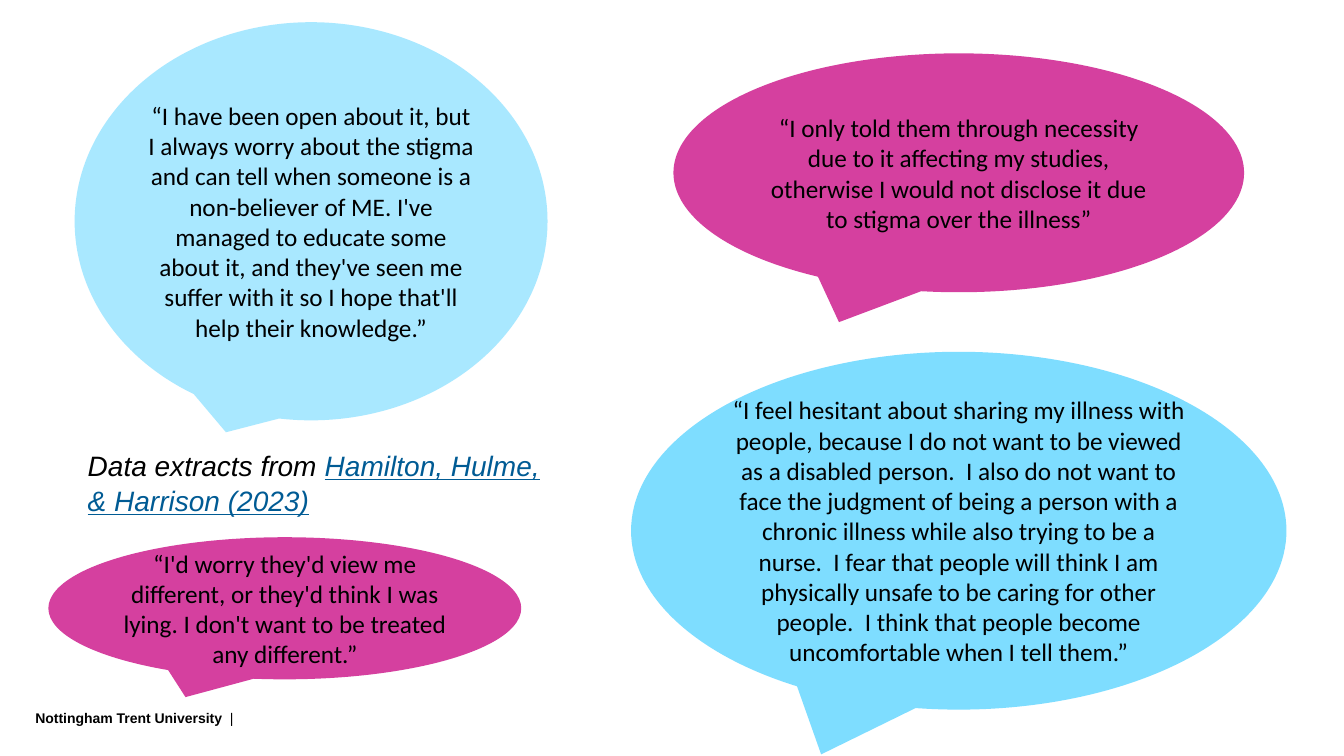
"""Build a slide of quotations in speech bubbles."""
import lxml.etree
import pptx
import pptx.dml.color
import pptx.enum.shapes
import pptx.enum.text
import pptx.oxml.ns
import pptx.util

Inches = pptx.util.Inches
BLACK = "000000"
TAIL = (-0.21, 0.625)

QUOTES = [
    ((0.74, 0.22, 4.69, 3.95), "8DE1FF", (-0.18, 0.53),
     "“I have been open about it, but I always worry about the stigma and can "
     "tell when someone is a non-believer of ME. I've managed to educate some "
     "about it, and they've seen me suffer with it so I hope that'll help "
     "their knowledge.”"),
    ((6.26, 3.49, 6.5, 3.55), "54D2FF", TAIL,
     "“I feel hesitant about sharing my illness with people, because I do not "
     "want to be viewed as a disabled person.  I also do not want to face the "
     "judgment of being a person with a chronic illness while also trying to "
     "be a nurse.  I fear that people will think I am physically unsafe to be "
     "caring for other people.  I think that people become uncomfortable when "
     "I tell them.”"),
    ((0.48, 5.33, 4.69, 1.41), "C7007F", TAIL,
     "“I'd worry they'd view me different, or they'd think I was lying. "
     "I don't want to be treated any different.”"),
    ((6.68, 0.53, 5.66, 2.37), "C7007F", TAIL,
     "“I only told them through necessity due to it affecting my studies, "
     "otherwise I would not disclose it due to stigma over the illness”"),
]


def rgb(value):
    """Return the colour for a hex string."""
    return pptx.dml.color.RGBColor.from_string(value)


def add_run(p, text, color=BLACK, **formats):
    """Append a run with the given font values."""
    r = p.add_run()
    r.text = text
    r.font.color.rgb = rgb(color)
    for name, value in formats.items():
        setattr(r.font, name, value)


def set_frame(tf, margin, anchor):
    """Set wrapping, equal margins and vertical anchor of a text frame."""
    formats = {"word_wrap": True, "vertical_anchor": anchor}
    for side in ("left", "top", "right", "bottom"):
        formats["margin_" + side] = Inches(margin)
    for name, value in formats.items():
        setattr(tf, name, value)


def add_quote(s, box, color, tail, text):
    """Place a translucent speech bubble with a centred quotation."""
    sp = s.shapes.add_shape(
        pptx.enum.shapes.MSO_SHAPE.OVAL_CALLOUT, *map(Inches, box))
    sp.adjustments[0], sp.adjustments[1] = tail
    sp.shadow.inherit = False
    sp.line.fill.background()
    sp.fill.solid()
    sp.fill.fore_color.rgb = rgb(color)
    fill = sp.fill._xPr.find(".//" + pptx.oxml.ns.qn("a:srgbClr"))
    lxml.etree.SubElement(fill, pptx.oxml.ns.qn("a:alpha"), val="75000")
    set_frame(sp.text_frame, 0.04, pptx.enum.text.MSO_ANCHOR.MIDDLE)
    p = sp.text_frame.paragraphs[0]
    p.alignment = pptx.enum.text.PP_ALIGN.CENTER
    add_run(p, text, size=pptx.util.Pt(18), name="Calibri")


def add_label(s, box, size, runs, spacing=1.0):
    """Place a plain text box made of (text, font values) runs."""
    sp = s.shapes.add_textbox(*map(Inches, box))
    set_frame(sp.text_frame, 0, pptx.enum.text.MSO_ANCHOR.TOP)
    p = sp.text_frame.paragraphs[0]
    p.line_spacing = spacing
    for text, formats in runs:
        add_run(p, text, size=pptx.util.Pt(size), name="Arial", **formats)


def build_slide(prs):
    """Add the slide with its footer, quotations and citation."""
    s = prs.slides.add_slide(prs.slide_layouts[6])
    add_label(s, (0.35, 7.04, 2.01, 0.24), 10, [
        ("Nottingham Trent University ", {"bold": True}), (" |", {})])
    for quote in QUOTES:
        add_quote(s, *quote)
    add_label(s, (0.87, 4.43, 4.56, 0.59), 20, [
        ("Data extracts from ", {"italic": True}),
        ("Hamilton, Hulme, & Harrison (2023)",
         {"italic": True, "underline": True, "color": "005B94"})], 1.05)


def main():
    """Create and save the presentation."""
    prs = pptx.Presentation()
    prs.slide_width, prs.slide_height = Inches(13.33), Inches(7.5)
    build_slide(prs)
    prs.save("out.pptx")


if __name__ == "__main__":
    main()
